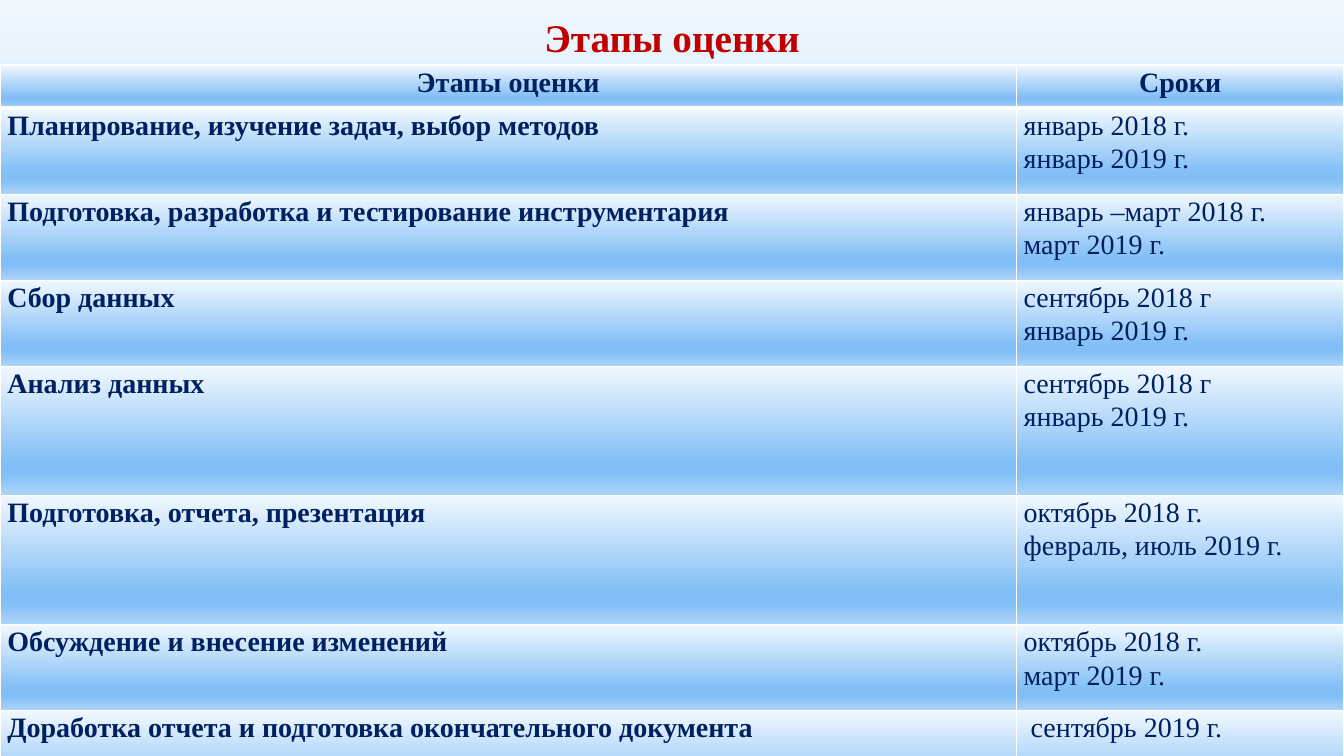
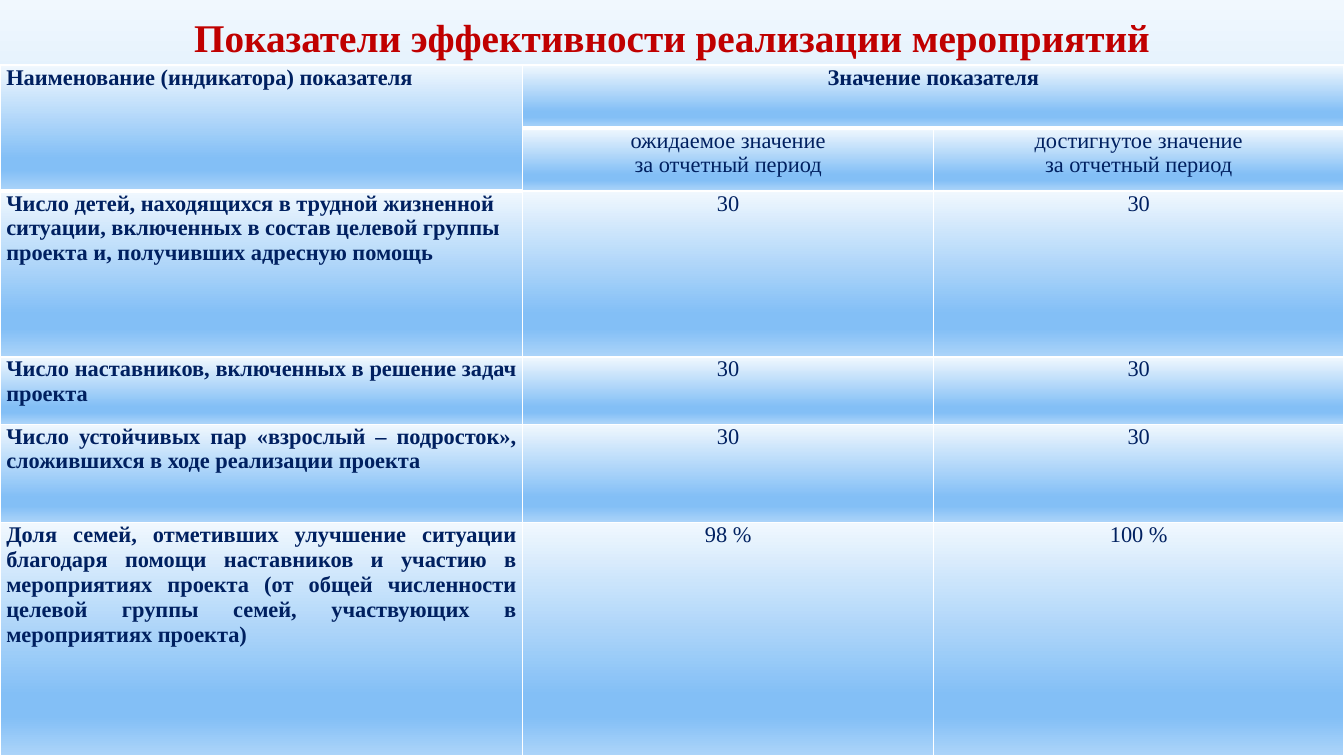
from copy import deepcopy

from lxml import etree
from pptx import Presentation
from pptx.dml.color import RGBColor
from pptx.enum.text import MSO_ANCHOR, MSO_AUTO_SIZE, PP_ALIGN as ALIGN
from pptx.oxml import parse_xml
from pptx.oxml.ns import nsdecls, qn
from pptx.util import Pt

PX = 9525
WIDTH, HEIGHT = 1280, 720
TABLE_TOP = 62

FONT = "Times New Roman"
RED = RGBColor(0xC0, 0x00, 0x00)
NAVY = RGBColor(0x00, 0x20, 0x60)
WHITE = RGBColor(0xFF, 0xFF, 0xFF)
PALE = RGBColor(0xF1, 0xF8, 0xFE)
SKY = RGBColor(0x83, 0xBF, 0xF6)
LIGHT = RGBColor(0xAC, 0xD4, 0xF9)

stops = "".join(
    f'<a:gs pos="{percent * 1000}"><a:srgbClr val="{color}"/></a:gs>'
    for percent, color in [(0, PALE), (74, SKY), (83, SKY), (100, LIGHT)]
)
GRADIENT = parse_xml(
    f'<a:gradFill {nsdecls("a")} rotWithShape="1"><a:gsLst>{stops}</a:gsLst>'
    '<a:lin ang="5400000" scaled="0"/></a:gradFill>'
)


def dress_cell(cell, is_header):
    """Give a cell white borders, thicker below a header, and the gradient."""
    properties = cell._tc.get_or_add_tcPr()
    weights = {"lnL": 1, "lnR": 1, "lnT": 1, "lnB": 3 if is_header else 1}
    if not is_header:
        del weights["lnT"]
    for side, points in weights.items():
        line = etree.SubElement(properties, qn(f"a:{side}"), w=str(Pt(points)))
        fill = etree.SubElement(line, qn("a:solidFill"))
        etree.SubElement(fill, qn("a:srgbClr"), val=str(WHITE))
    properties.append(deepcopy(GRADIENT))


def add_table_slide(title, rows, widths, heights, size, inset, spacing):
    """Add a titled slide with a table; the first row and column are bold."""
    slide = prs.slides.add_slide(layout)
    heading = slide.shapes.title.text_frame
    heading.text = title
    heading.vertical_anchor = MSO_ANCHOR.BOTTOM
    heading.auto_size = MSO_AUTO_SIZE.NONE
    paragraph = heading.paragraphs[0]
    paragraph.alignment = ALIGN.CENTER
    font = paragraph.font
    font.name, font.size, font.bold, font.color.rgb = FONT, Pt(28), True, RED

    table = slide.shapes.add_table(
        len(rows), len(widths), 0, TABLE_TOP * PX, WIDTH * PX, sum(heights) * PX
    ).table
    table.first_row = table.horz_banding = False
    for column, width in zip(table.columns, widths):
        column.width = width * PX
    for r, (texts, height) in enumerate(zip(rows, heights)):
        table.rows[r].height = height * PX
        for c, text in enumerate(texts):
            cell = table.cell(r, c)
            cell.text = text
            cell.margin_left = cell.margin_right = inset * PX
            cell.margin_top = cell.margin_bottom = 0
            dress_cell(cell, is_header=r == 0)
            for paragraph in cell.text_frame.paragraphs:
                paragraph.line_spacing = spacing
                font = paragraph.font
                font.name, font.size, font.color.rgb = FONT, Pt(size), NAVY
                font.bold = r == 0 or c == 0
    return table


prs = Presentation()
prs.slide_width, prs.slide_height = WIDTH * PX, HEIGHT * PX

master = prs.slide_master
master.background.fill.solid()
background = master.element.find(".//" + qn("p:bgPr"))
background.replace(background[0], deepcopy(GRADIENT))

layout = prs.slide_layouts.get_by_name("Title Only")
title_area = layout.placeholders[0]
title_area.left, title_area.top = 0, 8 * PX
title_area.width, title_area.height = WIDTH * PX, 54 * PX

# Evaluation stages
stages = [
    ("Этапы оценки", "Сроки"),
    ("Планирование, изучение задач, выбор методов", "январь 2018 г.\nянварь 2019 г."),
    ("Подготовка, разработка и тестирование инструментария",
     "январь –март 2018 г.\nмарт 2019 г."),
    ("Сбор данных", "сентябрь 2018 г\nянварь 2019 г."),
    ("Анализ данных", "сентябрь 2018 г\nянварь 2019 г."),
    ("Подготовка, отчета, презентация", "октябрь 2018 г.\nфевраль, июль 2019 г."),
    ("Обсуждение и внесение изменений", "октябрь 2018 г.\nмарт 2019 г."),
    ("Доработка отчета и подготовка окончательного документа", " сентябрь 2019 г."),
]
stage_table = add_table_slide(
    "Этапы оценки", stages, widths=[968, 312],
    heights=[41, 82, 82, 82, 123, 123, 82, 105], size=20, inset=7, spacing=1.07,
)
for c in range(2):
    stage_table.cell(0, c).text_frame.paragraphs[0].alignment = ALIGN.CENTER

# Performance indicators
indicators = [
    ("Наименование (индикатора) показателя", "Значение показателя", ""),
    ("", "ожидаемое значение\nза отчетный период",
     "достигнутое значение\nза отчетный период"),
    ("Число детей, находящихся в трудной жизненной ситуации, включенных в состав "
     "целевой группы проекта и, получивших адресную помощь", "30", "30"),
    ("Число наставников, включенных в решение задач проекта", "30", "30"),
    ("Число устойчивых пар «взрослый – подросток», сложившихся в ходе реализации "
     "проекта", "30", "30"),
    ("Доля семей, отметивших улучшение ситуации благодаря помощи наставников и "
     "участию в мероприятиях проекта (от общей численности целевой группы семей, "
     "участвующих в мероприятиях проекта)", "98 %", "100 %"),
]
indicator_table = add_table_slide(
    "Показатели эффективности реализации мероприятий", indicators,
    widths=[498, 391, 391], heights=[60, 60, 158, 64, 94, 222],
    size=16, inset=6, spacing=1.0,
)
for r in range(len(indicators)):
    name_alignment = ALIGN.JUSTIFY if r >= 3 else ALIGN.LEFT
    for c, alignment in enumerate([name_alignment, ALIGN.CENTER, ALIGN.CENTER]):
        for paragraph in indicator_table.cell(r, c).text_frame.paragraphs:
            paragraph.alignment = alignment
indicator_table.cell(0, 0).merge(indicator_table.cell(1, 0))
indicator_table.cell(0, 1).merge(indicator_table.cell(0, 2))

prs.save("out.pptx")
